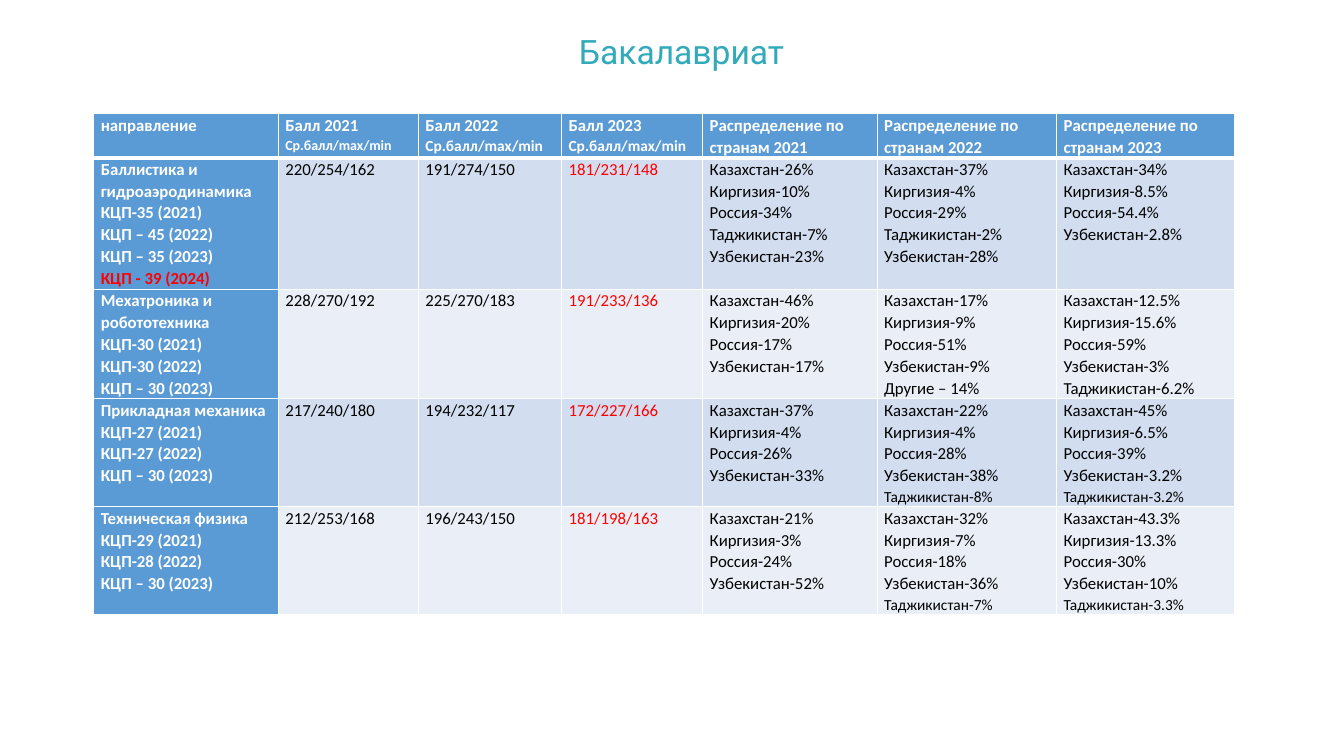
"""Build the slide with the table of bachelor admission scores."""
from lxml import etree
from pptx import Presentation
from pptx.dml.color import RGBColor
from pptx.enum.text import MSO_ANCHOR, PP_ALIGN
from pptx.oxml.ns import qn
from pptx.util import Inches, Pt

TOP = MSO_ANCHOR.TOP
CENTER = PP_ALIGN.CENTER
HUES = {"teal": "32AABA", "blue": "5B9BD5", "dark": "D2DEEF", "light": "EAEFF7",
        "white": "FFFFFF", "black": "000000", "red": "FF0000"}
WIDTHS = [1.83, 1.39, 1.42, 1.4, 1.73, 1.78, 1.77]
HEIGHTS = [0.43, 1.3, 1.08, 1.07, 1.07]
YEARS = [2021, 2022, 2023]

HEAD = [["направление"]]
HEAD += [[f"Балл {year}", "Ср.балл/max/min"] for year in YEARS]
HEAD += [[f"Распределение по странам {year}"] for year in YEARS]
ROWS = [
    HEAD,
    [["Баллистика и гидроаэродинамика", "КЦП-35 (2021)", "КЦП – 45 (2022)",
      "КЦП – 35 (2023)", "КЦП - 39 (2024)"],
     ["220/254/162"], ["191/274/150"], ["181/231/148"],
     ["Казахстан-26%", "Киргизия-10%", "Россия-34%", "Таджикистан-7%", "Узбекистан-23%"],
     ["Казахстан-37%", "Киргизия-4%", "Россия-29%", "Таджикистан-2%", "Узбекистан-28%"],
     ["Казахстан-34%", "Киргизия-8.5%", "Россия-54.4%", "Узбекистан-2.8%"]],
    [["Мехатроника и робототехника", "КЦП-30 (2021)", "КЦП-30 (2022)", "КЦП – 30 (2023)"],
     ["228/270/192"], ["225/270/183"], ["191/233/136"],
     ["Казахстан-46%", "Киргизия-20%", "Россия-17%", "Узбекистан-17%"],
     ["Казахстан-17%", "Киргизия-9%", "Россия-51%", "Узбекистан-9%", "Другие – 14%"],
     ["Казахстан-12.5%", "Киргизия-15.6%", "Россия-59%", "Узбекистан-3%",
      "Таджикистан-6.2%"]],
    [["Прикладная механика", "КЦП-27 (2021)", "КЦП-27 (2022)", "КЦП – 30 (2023)"],
     ["217/240/180"], ["194/232/117"], ["172/227/166"],
     ["Казахстан-37%", "Киргизия-4%", "Россия-26%", "Узбекистан-33%"],
     ["Казахстан-22%", "Киргизия-4%", "Россия-28%", "Узбекистан-38%", "Таджикистан-8%"],
     ["Казахстан-45%", "Киргизия-6.5%", "Россия-39%", "Узбекистан-3.2%",
      "Таджикистан-3.2%"]],
    [["Техническая физика", "КЦП-29 (2021)", "КЦП-28 (2022)", "КЦП – 30 (2023)"],
     ["212/253/168"], ["196/243/150"], ["181/198/163"],
     ["Казахстан-21%", "Киргизия-3%", "Россия-24%", "Узбекистан-52%"],
     ["Казахстан-32%", "Киргизия-7%", "Россия-18%", "Узбекистан-36%", "Таджикистан-7%"],
     ["Казахстан-43.3%", "Киргизия-13.3%", "Россия-30%", "Узбекистан-10%",
      "Таджикистан-3.3%"]],
]


def write(par, text, face, size, hue, bold=False):
    run = par.add_run()
    run.text = text
    run.font.name = face
    run.font.size = Pt(size)
    run.font.bold = bold
    run.font.color.rgb = RGBColor.from_string(HUES[hue])


def edge(cell, side, width):
    line = etree.SubElement(cell._tc.get_or_add_tcPr(), qn(f"a:ln{side}"), w=str(Pt(width)))
    fill = etree.SubElement(line, qn("a:solidFill"))
    etree.SubElement(fill, qn("a:srgbClr"), val=HUES["white"])


deck = Presentation()
deck.slide_width = Inches(13.33)
deck.slide_height = Inches(7.5)
slide = deck.slides.add_slide(deck.slide_layouts[5])

title = slide.shapes.title
title.left, title.top = Inches(3.36), Inches(0.26)
title.width, title.height = Inches(6.8), Inches(0.5)
title.text_frame.vertical_anchor = TOP
title.text_frame.word_wrap = True
par = title.text_frame.paragraphs[0]
par.alignment = CENTER
write(par, "Бакалавриат", "Roboto", 24, "teal")

frame = slide.shapes.add_table(len(ROWS), len(WIDTHS), Inches(0.93), Inches(1.13),
                               Inches(sum(WIDTHS)), Inches(sum(HEIGHTS)))
table = frame.table
table.first_col = True
for col, width in zip(table.columns, WIDTHS):
    col.width = Inches(width)
for row, height in zip(table.rows, HEIGHTS):
    row.height = Inches(height)

for r, row in enumerate(ROWS):
    for c, lines in enumerate(row):
        cell = table.cell(r, c)
        strong = r == 0 or c == 0
        cell.margin_left = cell.margin_right = Inches(0.07)
        cell.margin_top = cell.margin_bottom = 0
        for side in "LRTB":
            thick = (r == 0 and side == "B") or (r == 1 and side == "T")
            edge(cell, side, 3 if thick else 1)
        band = "blue" if strong else "dark" if r % 2 else "light"
        cell.fill.solid()
        cell.fill.fore_color.rgb = RGBColor.from_string(HUES[band])
        for n, text in enumerate(lines):
            par = cell.text_frame.paragraphs[0] if n == 0 else cell.text_frame.add_paragraph()
            par.line_spacing = 1.07
            size = 12
            if r == 0 and n == 1:
                size = 10 if c == 1 else 11
            elif r > 2 and text.startswith("Таджикистан"):
                size = 11
            hue = "white" if strong else "black"
            if (r > 0 and c == 3) or "2024" in text:
                hue = "red"
            write(par, text, "Calibri", size, hue, strong)

deck.save("out.pptx")
